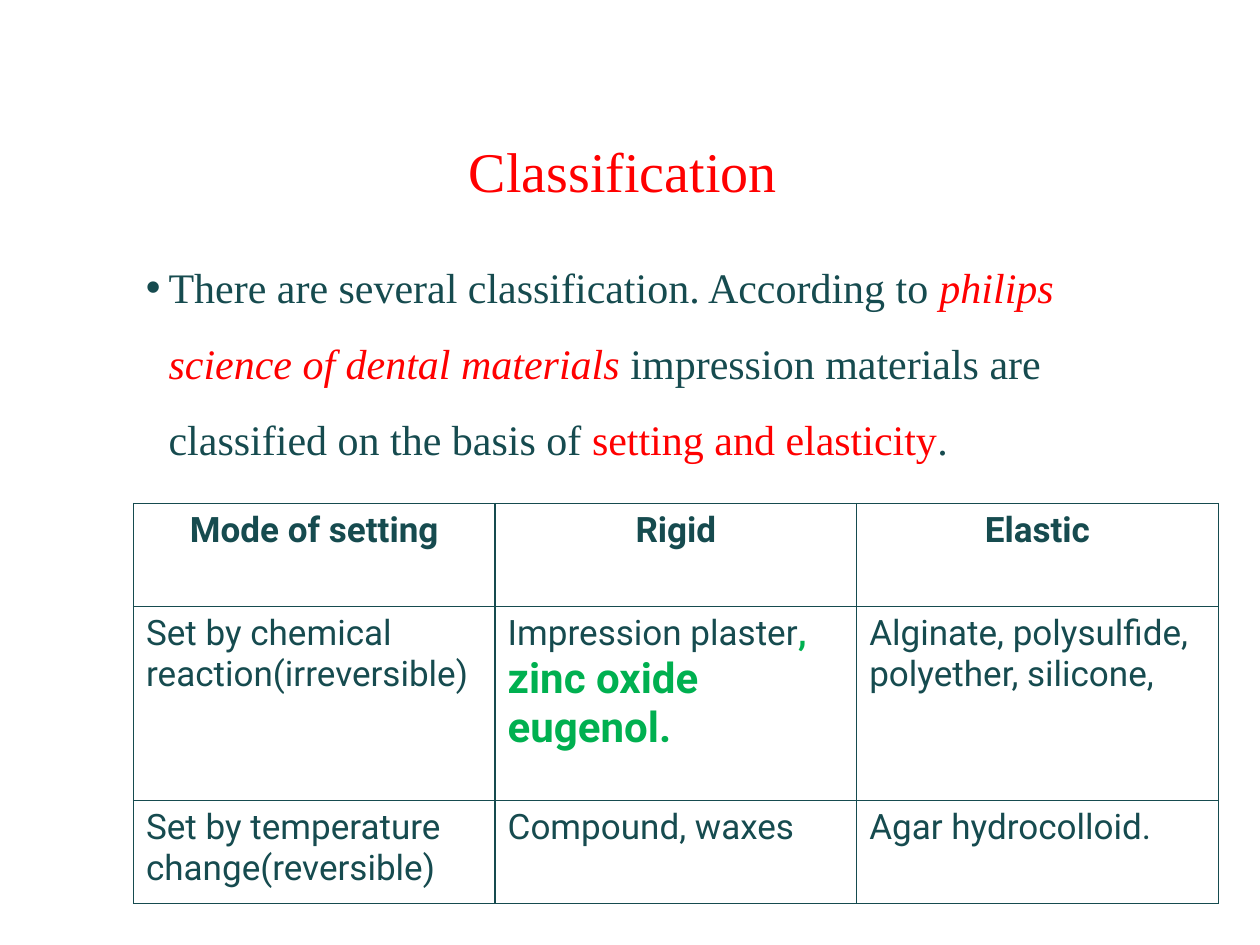
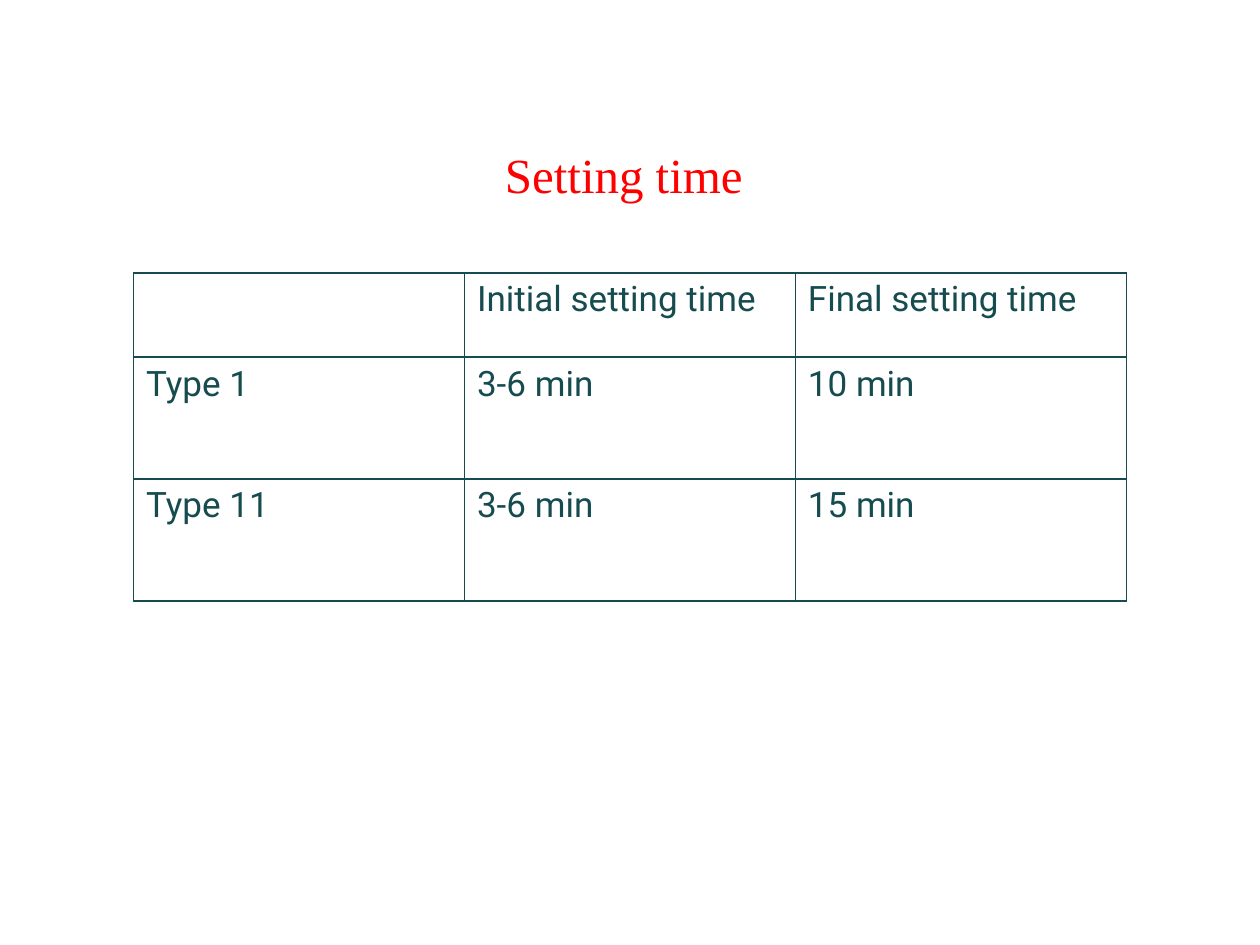
from collections import namedtuple

from lxml.etree import SubElement
from pptx import Presentation
from pptx.dml.color import RGBColor
from pptx.enum.text import MSO_ANCHOR as Anchor, PP_ALIGN as Align
from pptx.oxml.ns import qn
from pptx.util import Emu, Inches, Pt

COLORS = {"paper": "FFFFFF", "ink": "164B4F", "accent": "FF0000", "highlight": "00B050"}
SERIF, SANS = "Times New Roman", "Roboto"
WIDTH, HEIGHT = Inches(10), Inches(7.5)

Box = namedtuple("Box", "left top width height")
TITLE_BOX = Box(0.106, 0.056, 0.788, 0.167)
STATEMENT_BOX = Box(0.106, 0.244, 0.788, 0.656)
CLASSES_BOX = Box(0.106, 0.533, 0.861, 0.423)
TIMES_BOX = Box(0.106, 0.289, 0.788, 0.347)

STATEMENT = [
    "There are several classification. According to ",
    ("philips science of dental materials ", {"color": "accent", "italic": True}),
    "impression materials are classified on the basis of ",
    ("setting and elasticity", {"color": "accent"}),
    ".",
]
CLASSES = [
    ["Mode of setting", "Rigid", "Elastic"],
    [
        "Set by chemical reaction(irreversible)",
        [
            "Impression plaster",
            (", ", {"color": "highlight", "bold": True}),
            ("zinc oxide eugenol.", {"color": "highlight", "bold": True, "size": 24}),
        ],
        "Alginate, polysulfide, polyether, silicone,",
    ],
    ["Set by temperature change(reversible)", "Compound, waxes", "Agar hydrocolloid."],
]
TIMES = [
    ["", "Initial setting time", "Final setting time"],
    ["Type 1", "3-6 min", "10 min"],
    ["Type 11", "3-6 min", "15 min"],
]


def place(box):
    """Turn shares of the slide into lengths."""
    return (
        Emu(round(box.left * WIDTH)),
        Emu(round(box.top * HEIGHT)),
        Emu(round(box.width * WIDTH)),
        Emu(round(box.height * HEIGHT)),
    )


def add_bullet(paragraph):
    """Give a paragraph a round bullet with a hanging indent."""
    properties = paragraph._p.get_or_add_pPr()
    properties.set("marL", str(Inches(0.18)))
    properties.set("indent", str(Inches(-0.19)))
    SubElement(properties, qn("a:buFont"), typeface="Arial")
    SubElement(properties, qn("a:buChar"), char="•")


def write(frame, content, *, font=SANS, size=20, color="ink", bold=False,
          align=Align.LEFT, spacing=None, bullet=False):
    """Write plain text, or runs with their own format, into a text frame."""
    frame.word_wrap = True
    paragraph = frame.paragraphs[0]
    if bullet:
        add_bullet(paragraph)
    paragraph.alignment = align
    paragraph.line_spacing = spacing
    base = {"size": size, "color": color, "bold": bold, "italic": False}
    for part in [content] if isinstance(content, str) else content:
        wording, changes = (part, {}) if isinstance(part, str) else part
        if not wording:
            continue
        style = {**base, **changes}
        run = paragraph.add_run()
        run.text = wording
        run.font.name = font
        run.font.size = Pt(style["size"])
        run.font.bold = style["bold"]
        run.font.italic = style["italic"]
        run.font.color.rgb = RGBColor.from_string(COLORS[style["color"]])


def outline(cell):
    """Draw a thin ink line on all four sides of a cell."""
    properties = cell._tc.get_or_add_tcPr()
    for position, side in enumerate(("a:lnL", "a:lnR", "a:lnT", "a:lnB")):
        line = SubElement(properties, qn(side), w=str(Pt(1)))
        fill = SubElement(line, qn("a:solidFill"))
        SubElement(fill, qn("a:srgbClr"), val=COLORS["ink"])
        properties.insert(position, line)


def add_title(slide, box, wording, size):
    """Place the centred red title at the bottom of its box."""
    frame = slide.shapes.add_textbox(*place(box)).text_frame
    frame.vertical_anchor = Anchor.BOTTOM
    write(frame, wording, font=SERIF, size=size, color="accent",
          align=Align.CENTER, spacing=0.9)


def add_statement(slide, box, content):
    """Place a widely spaced bulleted statement."""
    frame = slide.shapes.add_textbox(*place(box)).text_frame
    write(frame, content, font=SERIF, size=24, spacing=1.5, bullet=True)


def add_grid(slide, box, rows, shares, **header_format):
    """Fill a box with an outlined table of equal columns and shared-out rows."""
    left, top, width, height = place(box)
    columns = len(rows[0])
    table = slide.shapes.add_table(len(rows), columns, left, top, width, height).table
    table.horz_banding = table.first_row = False
    for column in table.columns:
        column.width = Emu(width // columns)
    for row, share in zip(table.rows, shares):
        row.height = Emu(round(height * share / sum(shares)))
    for r, contents in enumerate(rows):
        for c, content in enumerate(contents):
            cell = table.cell(r, c)
            cell.fill.background()
            outline(cell)
            write(cell.text_frame, content, **(header_format if r == 0 else {}))


def add_blank(deck):
    """Add a blank slide on plain paper."""
    slide = deck.slides.add_slide(deck.slide_layouts[6])
    slide.background.fill.solid()
    slide.background.fill.fore_color.rgb = RGBColor.from_string(COLORS["paper"])
    return slide


def build_classification(deck):
    """Build the slide that classifies impression materials."""
    slide = add_blank(deck)
    add_title(slide, TITLE_BOX, "Classification ", 32)
    add_statement(slide, STATEMENT_BOX, STATEMENT)
    add_grid(slide, CLASSES_BOX, CLASSES, (0.82, 1.54, 0.82), bold=True, align=Align.CENTER)


def build_setting_time(deck):
    """Build the slide that compares setting times."""
    slide = add_blank(deck)
    add_title(slide, TITLE_BOX, "Setting time ", 28)
    add_grid(slide, TIMES_BOX, TIMES, (0.67, 0.97, 0.97))


def main():
    """Build both slides and save the deck."""
    deck = Presentation()
    deck.slide_width, deck.slide_height = WIDTH, HEIGHT
    build_classification(deck)
    build_setting_time(deck)
    deck.save("out.pptx")


if __name__ == "__main__":
    main()
